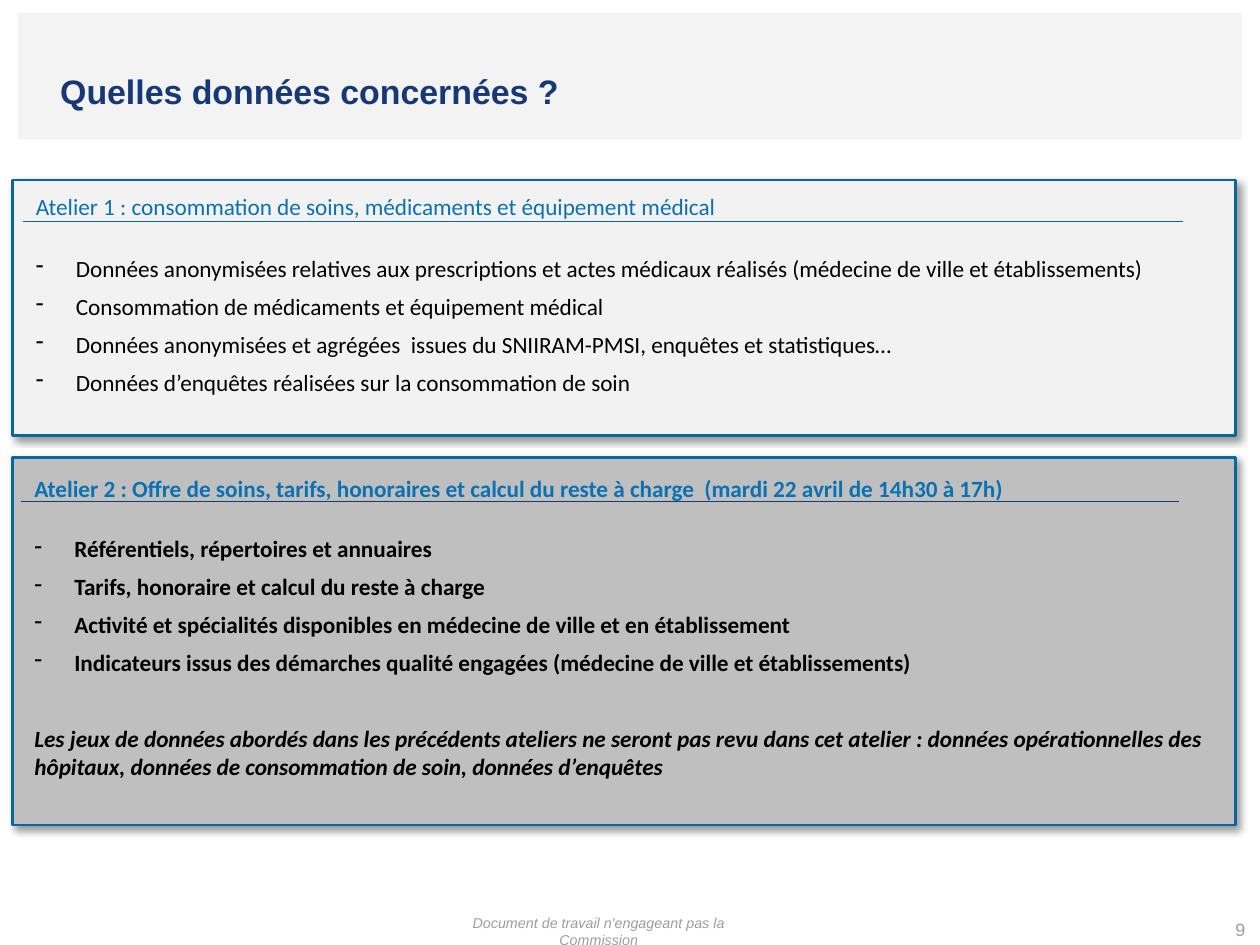
import pptx
import pptx.dml.color
import pptx.enum.shapes
import pptx.enum.text
import pptx.oxml
import pptx.oxml.ns
import pptx.util
from pptx.util import Cm

NAVY, BLUE, EDGE = "163876", "0A71B3", "0966A0"
BLACK, GREY = "000000", "9C9D9F"
TEXT_WIDTH = 23.9
HANG = Cm(0.79)
PARAGRAPH_GAP, CLOSING_GAP = 5.6, 26.7


def color(hex_code):
    return pptx.dml.color.RGBColor.from_string(hex_code)


def parse_drawing(xml):
    """Parse a DrawingML fragment whose tags use the a: prefix."""
    return pptx.oxml.parse_xml(xml.replace(">", f" {pptx.oxml.ns.nsdecls('a')}>", 1))


def add_rectangle(slide, left, top, width, height, fill):
    rectangle = slide.shapes.add_shape(
        pptx.enum.shapes.MSO_SHAPE.RECTANGLE,
        Cm(left), Cm(top), Cm(width), Cm(height))
    rectangle.shadow.inherit = False
    rectangle.fill.solid()
    rectangle.fill.fore_color.rgb = color(fill)
    rectangle.line.fill.background()
    return rectangle


def add_panel(slide, top, height, fill):
    """Add an outlined workshop frame with a soft shadow."""
    panel = add_rectangle(slide, 0.25, top, 24.16, height, fill)
    panel.line.color.rgb = color(EDGE)
    panel.line.width = pptx.util.Pt(1.5)
    effects = panel._element.spPr.find(pptx.oxml.ns.qn("a:effectLst"))
    effects.append(parse_drawing(
        '<a:outerShdw blurRad="50800" dist="38100" dir="2700000" algn="tl" rotWithShape="0">'
        f'<a:srgbClr val="{BLACK}"><a:alpha val="40000"/></a:srgbClr></a:outerShdw>'))


def add_rule(slide, left, right, y, stroke):
    rule = slide.shapes.add_connector(
        pptx.enum.shapes.MSO_CONNECTOR.STRAIGHT, Cm(left), Cm(y), Cm(right), Cm(y))
    rule.line.color.rgb = color(stroke)
    rule.line.width = pptx.util.Pt(0.75)
    rule._element.spPr.append(parse_drawing("<a:effectLst></a:effectLst>"))


def add_text_frame(slide, left, top, width, height):
    frame = slide.shapes.add_textbox(Cm(left), Cm(top), Cm(width), Cm(height)).text_frame
    frame.word_wrap = True
    return frame


def add_run(paragraph, text, size, ink, font="Calibri", bold=False, italic=False):
    run = paragraph.add_run()
    run.text = text
    run.font.size = pptx.util.Pt(size)
    run.font.name = font
    run.font.color.rgb = color(ink)
    run.font.bold = bold
    run.font.italic = italic


def set_dash(paragraph):
    properties = paragraph._p.get_or_add_pPr()
    properties.set("marL", str(HANG))
    properties.set("indent", str(-HANG))
    properties.append(parse_drawing('<a:buChar char="-"></a:buChar>'))


def add_title(slide, text):
    frame = add_text_frame(slide, 0, 0.03, 24.89, 3.53)
    frame.margin_left = Cm(1.19)
    frame.vertical_anchor = pptx.enum.text.MSO_ANCHOR.MIDDLE
    add_run(frame.paragraphs[0], text, 19, NAVY, "Arial", bold=True)


def add_footer(slide, left, top, width, height, text, size, italic=False):
    frame = add_text_frame(slide, left, top, width, height)
    frame.word_wrap = False
    frame.margin_left = frame.margin_right = frame.margin_top = frame.margin_bottom = 0
    frame.vertical_anchor = pptx.enum.text.MSO_ANCHOR.MIDDLE
    frame.paragraphs[0].alignment = pptx.enum.text.PP_ALIGN.CENTER
    add_run(frame.paragraphs[0], text, size, GREY, "Arial", italic=italic)


def add_heading(slide, left, top, text, bold=False):
    frame = add_text_frame(slide, left, top, TEXT_WIDTH, 0.81)
    add_run(frame.paragraphs[0], text, 13, BLUE, bold=bold)


def add_topics(slide, left, top, height, topics, bold=False, closing=None):
    """Add a dashed list, with an optional closing remark in italics."""
    frame = add_text_frame(slide, left, top, TEXT_WIDTH, height)
    for index, topic in enumerate(topics):
        paragraph = frame.add_paragraph() if index else frame.paragraphs[0]
        if index:
            paragraph.space_before = pptx.util.Pt(PARAGRAPH_GAP)
        set_dash(paragraph)
        add_run(paragraph, topic, 13, BLACK, bold=bold)
    if closing:
        remark = frame.add_paragraph()
        remark.space_before = pptx.util.Pt(CLOSING_GAP)
        add_run(remark, closing, 13, BLACK, bold=bold, italic=True)


def main():
    deck = pptx.Presentation()
    deck.slide_width, deck.slide_height = Cm(24.89), Cm(18.67)
    slide = deck.slides.add_slide(deck.slide_layouts[6])

    add_rectangle(slide, 0.36, 0.25, 24.18, 2.51, "F3F3F3")
    add_footer(slide, 24.18, 18.14, 0.64, 0.43, "9", 10)
    add_footer(slide, 8.53, 18.24, 6.6, 0.33,
               "Document de travail n'engageant pas la Commission", 8, italic=True)
    add_title(slide, "Quelles données concernées ?")

    add_panel(slide, 3.56, 5.05, "F2F2F2")
    add_topics(slide, 0.46, 4.9, 4.04, [
        "Données anonymisées relatives aux prescriptions et actes médicaux réalisés "
        "(médecine de ville et établissements)",
        "Consommation de médicaments et équipement médical",
        "Données anonymisées et agrégées  issues du SNIIRAM-PMSI, enquêtes et statistiques…",
        "Données d’enquêtes réalisées sur la consommation de soin",
    ])
    add_heading(slide, 0.46, 3.68,
                "Atelier 1 : consommation de soins, médicaments et équipement médical")
    add_rule(slide, 0.46, 23.37, 4.37, EDGE)

    add_panel(slide, 9.04, 7.26, "BFBFBF")
    add_topics(slide, 0.43, 10.44, 5.38, [
        "Référentiels, répertoires et annuaires",
        "Tarifs, honoraire et calcul du reste à charge",
        "Activité et spécialités disponibles en médecine de ville et en établissement",
        "Indicateurs issus des démarches qualité engagées (médecine de ville et établissements)",
    ], bold=True, closing=(
        "Les jeux de données abordés dans les précédents ateliers ne seront pas revu dans "
        "cet atelier : données opérationnelles des hôpitaux, données de consommation de "
        "soin, données d’enquêtes"))
    add_heading(slide, 0.43, 9.25,
                "Atelier 2 : Offre de soins, tarifs, honoraires et calcul du reste à charge  "
                "(mardi 22 avril de 14h30 à 17h)", bold=True)
    add_rule(slide, 0.41, 23.29, 9.91, NAVY)

    deck.save("out.pptx")


if __name__ == "__main__":
    main()
